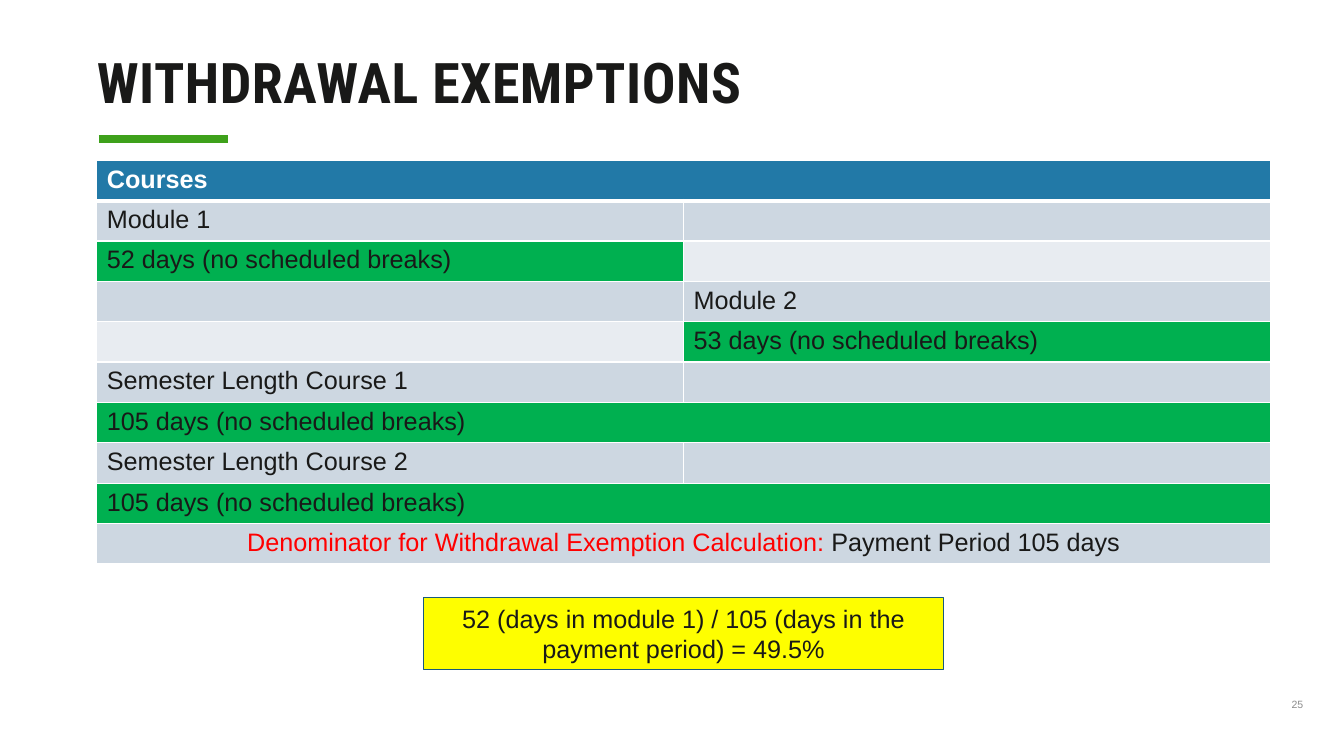
from lxml.etree import SubElement
from pptx import Presentation
from pptx.dml.color import RGBColor
from pptx.enum.shapes import MSO_CONNECTOR as Connector, MSO_SHAPE as Shape
from pptx.enum.text import MSO_ANCHOR as Anchor, PP_ALIGN as Align
from pptx.oxml.ns import qn
from pptx.util import Inches, Pt

COLORS = {
    "ink": "191918", "white": "FFFFFF", "accent": "3EA11B", "header": "2279A7",
    "dark_band": "CDD7E1", "light_band": "E8ECF1", "days": "00B050",
    "red": "FF0000", "yellow": "FEFE00", "outline": "195A7C", "number": "8C8C8C",
}
TITLE = "WITHDRAWAL EXEMPTIONS"
ROWS = [
    ("Courses",),
    ("Module 1", ""),
    ("52 days (no scheduled breaks)", ""),
    ("", "Module 2"),
    ("", "53 days (no scheduled breaks)"),
    ("Semester Length Course 1", ""),
    ("105 days (no scheduled breaks)",),
    ("Semester Length Course 2", ""),
    ("105 days (no scheduled breaks)",),
]
DENOMINATOR = [
    ("Denominator for Withdrawal Exemption Calculation: ", "red"),
    ("Payment Period 105 days", "ink"),
]
RESULT = "52 (days in module 1) / 105 (days in the payment period) = 49.5%"
PAGE_NUMBER = "25"
COLUMN_WIDTH, ROW_HEIGHT = 5.82, 0.38


def rgb(name):
    return RGBColor.from_string(COLORS[name])


def add_span(para, text, size=18, color="ink", bold=False, font="Arial"):
    span = para.add_run()
    span.text = text
    span.font.size = Pt(size)
    span.font.name = font
    span.font.bold = bold
    span.font.color.rgb = rgb(color)
    return span


def add_box(page, left, top, width, height, insets):
    box = page.shapes.add_textbox(*map(Inches, (left, top, width, height)))
    frame = box.text_frame
    frame.word_wrap = True
    frame.vertical_anchor = Anchor.TOP
    (frame.margin_left, frame.margin_top,
     frame.margin_right, frame.margin_bottom) = map(Inches, insets)
    return frame.paragraphs[0]


def set_borders(cell, bottom):
    properties = cell._tc.get_or_add_tcPr()
    widths = {"a:lnL": 1, "a:lnR": 1, "a:lnT": 1, "a:lnB": bottom}
    for position, (tag, width) in enumerate(widths.items()):
        line = SubElement(properties, qn(tag), w=str(Pt(width)))
        fill = SubElement(line, qn("a:solidFill"))
        SubElement(fill, qn("a:srgbClr"), val=COLORS["white"])
        properties.insert(position, line)


def cell_fill(row, text):
    if row == 0:
        return "header"
    if "days" in text:
        return "days"
    return "dark_band" if row % 2 else "light_band"


def add_courses(page):
    count = len(ROWS) + 1
    table = page.shapes.add_table(
        count, 2, Inches(0.96), Inches(1.59),
        Inches(2 * COLUMN_WIDTH), Inches(count * ROW_HEIGHT)).table
    for column in table.columns:
        column.width = Inches(COLUMN_WIDTH)
    for row_index, texts in enumerate(ROWS + [("",)]):
        table.rows[row_index].height = Inches(ROW_HEIGHT)
        if len(texts) == 1:
            table.cell(row_index, 0).merge(table.cell(row_index, 1))
        for column_index in range(2):
            cell = table.cell(row_index, column_index)
            text = texts[min(column_index, len(texts) - 1)]
            cell.fill.solid()
            cell.fill.fore_color.rgb = rgb(cell_fill(row_index, text))
            set_borders(cell, 1 if row_index else 3)
            if text and not cell.is_spanned:
                add_span(cell.text_frame.paragraphs[0], text,
                         color="ink" if row_index else "white", bold=row_index == 0)
    para = table.cell(count - 1, 0).text_frame.paragraphs[0]
    para.alignment = Align.CENTER
    for text, color in DENOMINATOR:
        add_span(para, text, color=color)


def add_result(page):
    box = page.shapes.add_shape(
        Shape.RECTANGLE, Inches(4.2), Inches(5.93), Inches(5.16), Inches(0.71))
    box.shadow.inherit = False
    box.fill.solid()
    box.fill.fore_color.rgb = rgb("yellow")
    box.line.color.rgb = rgb("outline")
    box.line.width = Pt(0.75)
    box.text_frame.word_wrap = True
    para = box.text_frame.paragraphs[0]
    para.alignment = Align.CENTER
    add_span(para, RESULT)


def main():
    deck = Presentation()
    deck.slide_width, deck.slide_height = Inches(13.33), Inches(7.5)
    page = deck.slides.add_slide(deck.slide_layouts[6])

    rule = page.shapes.add_connector(
        Connector.STRAIGHT, Inches(0.98), Inches(1.38), Inches(2.26), Inches(1.38))
    rule.line.color.rgb = rgb("accent")
    rule.line.width = Pt(6.25)
    SubElement(rule._element.spPr, qn("a:effectLst"))

    para = add_box(page, 0.83, 0.48, 9.71, 0.87, (0.13, 0.07, 0.13, 0.07))
    para.line_spacing = 0.9
    title = add_span(para, TITLE, 40, bold=True, font="Roboto Condensed")
    title.font._element.set("spc", "40")

    add_courses(page)
    add_result(page)
    add_span(add_box(page, 12.81, 6.92, 0.42, 0.41, (0, 0, 0.1, 0.05)),
             PAGE_NUMBER, 7.5, "number")
    deck.save("out.pptx")


if __name__ == "__main__":
    main()
